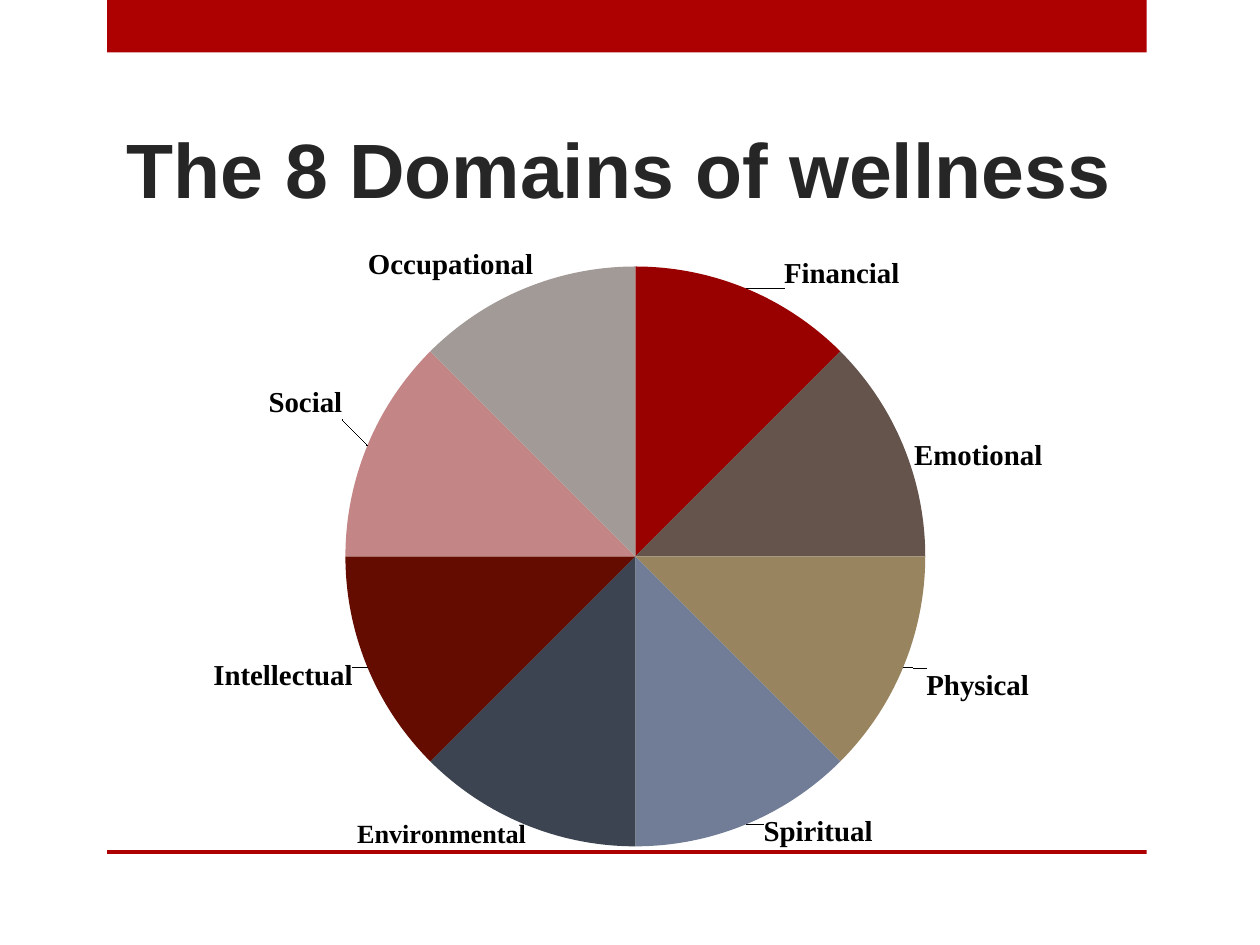
"""Builds a slide with a pie of the eight domains of wellness."""
from dataclasses import dataclass

from lxml import etree
from pptx import Presentation
from pptx import util as u
from pptx.chart import data
from pptx.dml import color
from pptx.enum import chart as ch, shapes, text
from pptx.oxml import ns


@dataclass(frozen=True)
class Theme:
    accent: str = "AD0101"
    heading: str = "262626"
    label: str = "000000"
    heading_font: str = "Arial"
    label_font: str = "Times New Roman"
    heading_size: float = 44
    label_size: float = 16.5
    small_label_size: float = 15


@dataclass(frozen=True)
class Domain:
    name: str
    fill: str
    shift_x: float
    shift_y: float
    size: float = Theme.label_size


DOMAINS = [
    Domain("Financial", "990000", 20, 5),
    Domain("Emotional", "65544B", 2.3, 16.7),
    Domain("Physical", "998460", 9.3, -0.7),
    Domain("Spiritual", "717D96", 8.3, -9),
    Domain("Environmental", "3B4450", 2.7, -6.6, Theme.small_label_size),
    Domain("Intellectual", "650C00", -4.4, -6.2),
    Domain("Social", "C38585", -10.4, -13.3),
    Domain("Occupational", "A29A96", 6.7, -0.6),
]


def manual_layout(**settings):
    layout = etree.Element(ns.qn("c:layout"))
    manual = etree.SubElement(layout, ns.qn("c:manualLayout"))
    for tag, value in settings.items():
        etree.SubElement(manual, ns.qn(f"c:{tag}")).set("val", str(value))
    return layout


class WellnessSlide:
    def __init__(self, slide, theme):
        self.slide = slide
        self.theme = theme

    def style(self, font, name, size, rgb):
        font.name, font.size, font.bold = name, u.Pt(size), True
        font.color.rgb = color.RGBColor.from_string(rgb)

    def bar(self, top, height):
        bar = self.slide.shapes.add_shape(
            shapes.MSO_SHAPE.RECTANGLE, u.Pt(61.2), u.Pt(top), u.Pt(594), u.Pt(height))
        bar.shadow.inherit = False
        bar.fill.solid()
        bar.fill.fore_color.rgb = color.RGBColor.from_string(self.theme.accent)
        bar.line.fill.background()

    def heading(self, words, left, top, width, height):
        frame = self.slide.shapes.add_textbox(
            u.Pt(left), u.Pt(top), u.Pt(width), u.Pt(height)).text_frame
        frame.word_wrap = True
        frame.vertical_anchor = text.MSO_ANCHOR.BOTTOM
        paragraph = frame.paragraphs[0]
        paragraph.text = words
        paragraph.alignment = text.PP_ALIGN.CENTER
        self.style(paragraph.font, self.theme.heading_font,
                   self.theme.heading_size, self.theme.heading)

    def pie(self, domains, left, top, width, height, inset_x, inset_y, diameter):
        shares = data.CategoryChartData()
        shares.categories = [domain.name for domain in domains]
        shares.add_series("Series 1", [12] * len(domains))
        chart = self.slide.shapes.add_chart(
            ch.XL_CHART_TYPE.PIE, u.Pt(left), u.Pt(top), u.Pt(width), u.Pt(height),
            shares).chart
        chart.has_legend = chart.has_title = False
        chart.font.name, chart.font.size = self.theme.label_font, u.Pt(18)
        chart.plots[0].vary_by_categories = True

        plot_area = chart.element.find(".//" + ns.qn("c:plotArea"))
        for automatic in plot_area.findall(ns.qn("c:layout")):
            plot_area.remove(automatic)
        plot_area.insert(0, manual_layout(
            layoutTarget="inner", xMode="edge", yMode="edge",
            x=round(inset_x / width, 4), y=round(inset_y / height, 4),
            w=round(diameter / width, 4), h=round(diameter / height, 4)))

        series = chart.plots[0].series[0]
        labels = series.data_labels
        labels.show_category_name, labels.show_value = True, False
        labels.position = ch.XL_LABEL_POSITION.OUTSIDE_END
        self.style(labels.font, self.theme.label_font,
                   self.theme.label_size, self.theme.label)
        for index, domain in enumerate(domains):
            point = series.points[index]
            point.format.fill.solid()
            point.format.fill.fore_color.rgb = color.RGBColor.from_string(domain.fill)
            point.format.line.fill.background()
            point.data_label.position = ch.XL_LABEL_POSITION.OUTSIDE_END
            self.style(point.data_label.font, self.theme.label_font,
                       domain.size, self.theme.label)

        for domain, label in zip(domains, plot_area.iter(ns.qn("c:dLbl"))):
            label.find(ns.qn("c:showVal")).set("val", "0")
            label.find(ns.qn("c:showCatName")).set("val", "1")
            label.find(ns.qn("c:showPercent")).set("val", "0")
            label.insert(1, manual_layout(x=round(domain.shift_x / width, 4),
                                          y=round(domain.shift_y / height, 4)))
        for leader in plot_area.iter(ns.qn("c:showLeaderLines")):
            leader.set("val", "1")


def main():
    deck = Presentation()
    deck.slide_width, deck.slide_height = u.Pt(720), u.Pt(540)
    wellness = WellnessSlide(deck.slides.add_slide(deck.slide_layouts[6]), Theme())
    wellness.bar(0, 30)
    wellness.bar(485.8, 2.2)
    wellness.heading("The 8 Domains of wellness", 24, 36, 660, 90)
    wellness.pie(DOMAINS, 54, 126, 612, 384, inset_x=143.4, inset_y=26.3, diameter=331.4)
    deck.save("out.pptx")


if __name__ == "__main__":
    main()
